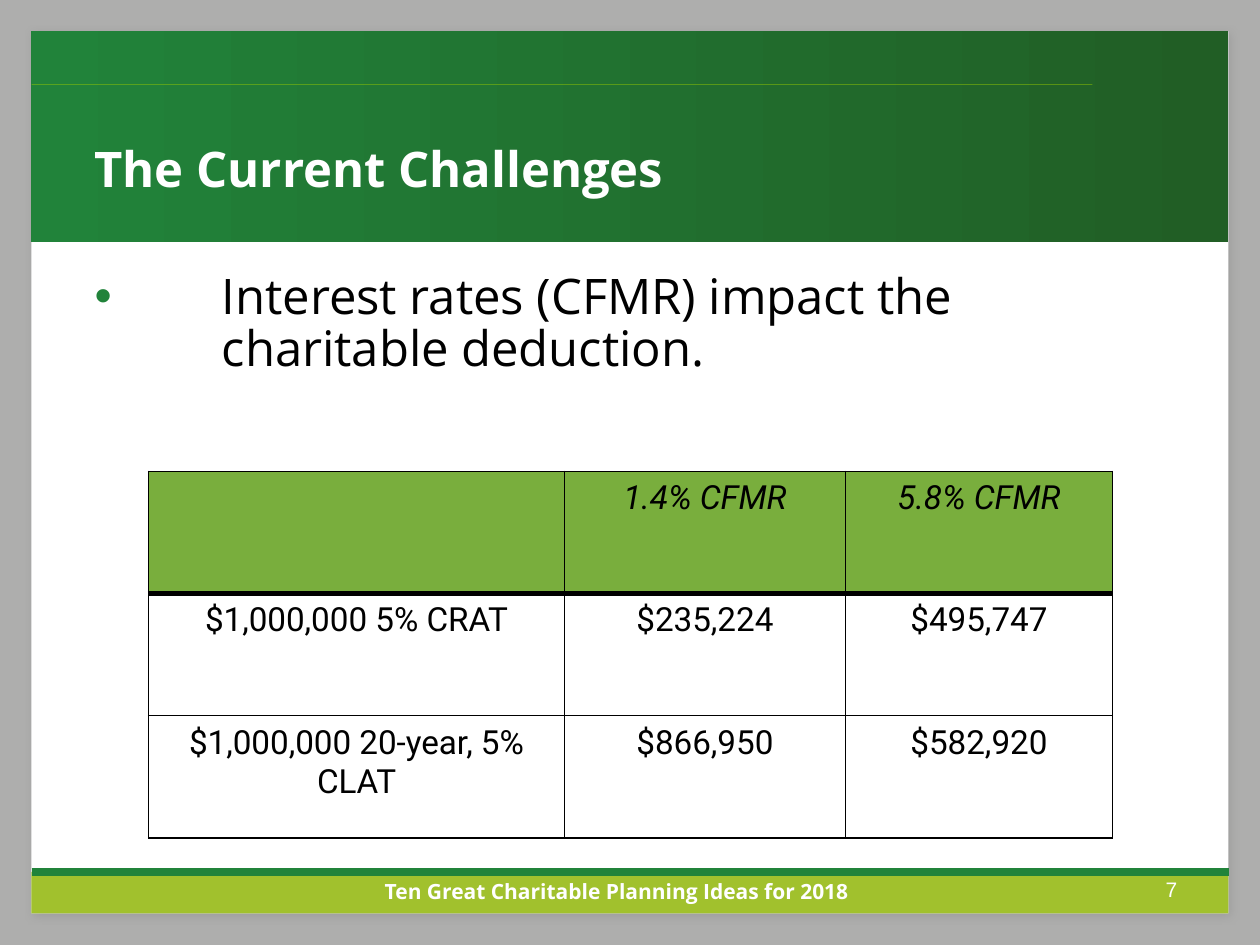
"""Build the slide on interest rates and the charitable deduction."""
import lxml.etree
import pptx
import pptx.dml.color
import pptx.enum.shapes
import pptx.enum.text
import pptx.oxml
import pptx.oxml.ns
import pptx.util

Inches = pptx.util.Inches
Pt = pptx.util.Pt
RGBColor = pptx.dml.color.RGBColor
PP_ALIGN = pptx.enum.text.PP_ALIGN
MSO_ANCHOR = pptx.enum.text.MSO_ANCHOR
qn = pptx.oxml.ns.qn

GRAY = RGBColor(0xAE, 0xAE, 0xAD)
SHADOW = RGBColor(0x80, 0x80, 0x80)
WHITE = RGBColor(0xFF, 0xFF, 0xFF)
BLACK = RGBColor(0x00, 0x00, 0x00)
LIME = RGBColor(0xA1, 0xC1, 0x2D)
BRIGHT_LIME = RGBColor(0x99, 0xCC, 0x00)
GREEN = RGBColor(0x21, 0x83, 0x3A)
DARK_GREEN = RGBColor(0x21, 0x5E, 0x25)
HEADER_GREEN = RGBColor(0x79, 0xAE, 0x3D)

NAMESPACE = pptx.oxml.ns.nsdecls("a")
THIN, THICK = 1, 3
ROWS = [
    ["", "1.4% CFMR", "5.8% CFMR"],
    ["$1,000,000 5% CRAT", "$235,224", "$495,747"],
    ["$1,000,000 20-year, 5% CLAT", "$866,950", "$582,920"],
]
COLUMN_WIDTHS = [3.3, 2.23, 2.12]
ROW_HEIGHT = 0.97


def add_panel(slide, left, top, width, height, color):
    """Add a plain filled rectangle and return it."""
    shape = slide.shapes.add_shape(
        pptx.enum.shapes.MSO_SHAPE.RECTANGLE,
        Inches(left), Inches(top), Inches(width), Inches(height))
    shape.shadow.inherit = False
    shape.fill.solid()
    shape.fill.fore_color.rgb = color
    shape.line.fill.background()
    return shape


def add_soft_shadow(shape):
    """Give a shape a soft diagonal shadow."""
    effects = shape.element.spPr.find(qn("a:effectLst"))
    effects.append(pptx.oxml.parse_xml(
        f'<a:outerShdw {NAMESPACE} blurRad="{Pt(5)}" dist="{Pt(2)}" dir="2700000">'
        f'<a:srgbClr val="{SHADOW}"><a:alpha val="37000"/></a:srgbClr></a:outerShdw>'))


def fill_gradient(shape, first, last):
    """Fill a shape with a gradient running from right to left."""
    shape.fill.gradient()
    shape.fill.gradient_angle = 180
    for stop, color, position in zip(shape.fill.gradient_stops, (first, last), (0, 1)):
        stop.color.rgb = color
        stop.position = position


def add_rule(slide, left, right, top, color, width, opacity=100):
    """Add a horizontal line."""
    connector = slide.shapes.add_connector(
        pptx.enum.shapes.MSO_CONNECTOR.STRAIGHT,
        Inches(left), Inches(top), Inches(right), Inches(top))
    connector.line.color.rgb = color
    connector.line.width = Pt(width)
    properties = connector.element.spPr
    if opacity < 100:
        color_element = next(properties.iter(qn("a:srgbClr")))
        lxml.etree.SubElement(color_element, qn("a:alpha")).set("val", str(opacity * 1000))
    lxml.etree.SubElement(properties, qn("a:effectLst"))


def add_run(paragraph, text, size, font_name, color, bold=False, italic=False):
    """Add one formatted run to a paragraph."""
    run = paragraph.add_run()
    run.text = text
    font = run.font
    font.size, font.name, font.bold, font.italic = Pt(size), font_name, bold, italic
    font.color.rgb = color


def set_frame(shape, left, top, width, height, inset=0, wrap=True, anchor=MSO_ANCHOR.TOP):
    """Place a text shape, set up its frame and return its first paragraph."""
    shape.left, shape.top = Inches(left), Inches(top)
    shape.width, shape.height = Inches(width), Inches(height)
    frame = shape.text_frame
    frame.margin_left = frame.margin_right = Inches(inset)
    frame.margin_top = frame.margin_bottom = Inches(inset)
    frame.auto_size = pptx.enum.text.MSO_AUTO_SIZE.NONE
    frame.word_wrap = wrap
    frame.vertical_anchor = anchor
    return frame.paragraphs[0]


def add_label(slide, box, text, font_name, alignment, **options):
    """Add a small white text box."""
    shape = slide.shapes.add_textbox(*map(Inches, box))
    paragraph = set_frame(shape, *box, inset=options.get("inset", 0),
                          wrap=options.get("wrap", True))
    paragraph.alignment = alignment
    add_run(paragraph, text, 12, font_name, WHITE, bold=options.get("bold", False))


def fill_title(slide):
    """Format the title placeholder and bring it to the front."""
    title = slide.shapes.title
    paragraph = set_frame(title, 0.75, 0.92, 8.5, 0.83, anchor=MSO_ANCHOR.MIDDLE)
    paragraph.alignment = PP_ALIGN.LEFT
    add_run(paragraph, "The Current Challenges", 28, "Open Sans", WHITE, bold=True)
    title.element.getparent().append(title.element)


def fill_body(slide):
    """Format the body placeholder as a bullet and bring it to the front."""
    body = slide.placeholders[1]
    paragraph = set_frame(body, 0.75, 2.17, 8.5, 4.5)
    paragraph.space_before = Pt(21)
    paragraph.line_spacing = 0.88
    add_run(paragraph, "Interest rates (CFMR) impact the charitable deduction.",
            28, "Open Sans", BLACK)
    properties = paragraph.runs[0].font._element.getparent().getparent().get_or_add_pPr()
    properties.set("marL", str(Inches(1.01)))
    properties.set("indent", str(-Inches(1.01)))
    for bullet in (f'<a:buClr {NAMESPACE}><a:srgbClr val="{GREEN}"/></a:buClr>',
                   f'<a:buFont {NAMESPACE} typeface="Arial"/>',
                   f'<a:buChar {NAMESPACE} char="•"/>'):
        properties.append(pptx.oxml.parse_xml(bullet))
    body.element.getparent().append(body.element)


def set_borders(cell, top, bottom):
    """Draw black borders on the four sides of a cell."""
    properties = cell._tc.get_or_add_tcPr()
    sides = (("lnL", THIN), ("lnR", THIN), ("lnT", top), ("lnB", bottom))
    for index, (side, width) in enumerate(sides):
        properties.insert(index, pptx.oxml.parse_xml(
            f'<a:{side} {NAMESPACE} w="{Pt(width)}"><a:solidFill>'
            f'<a:srgbClr val="{BLACK}"/></a:solidFill></a:{side}>'))


def add_deduction_table(slide):
    """Add the table of deductions by interest rate."""
    table = slide.shapes.add_table(
        len(ROWS), len(COLUMN_WIDTHS), Inches(1.18), Inches(3.74),
        Inches(sum(COLUMN_WIDTHS)), Inches(ROW_HEIGHT * len(ROWS))).table
    table.first_row = table.horz_banding = False
    for column, width in zip(table.columns, COLUMN_WIDTHS):
        column.width = Inches(width)
    for row_index, texts in enumerate(ROWS):
        header = row_index == 0
        table.rows[row_index].height = Inches(ROW_HEIGHT)
        for column_index, text in enumerate(texts):
            cell = table.cell(row_index, column_index)
            cell.margin_left = cell.margin_right = Inches(0.06)
            cell.margin_top = cell.margin_bottom = Inches(0.06)
            cell.fill.solid()
            cell.fill.fore_color.rgb = HEADER_GREEN if header else WHITE
            set_borders(cell, THICK if row_index == 1 else THIN, THICK if header else THIN)
            if text:
                paragraph = cell.text_frame.paragraphs[0]
                paragraph.alignment = PP_ALIGN.CENTER
                add_run(paragraph, text, 19, "Roboto", BLACK, italic=header)


def main():
    """Build and save the presentation."""
    presentation = pptx.Presentation()
    presentation.slide_width, presentation.slide_height = Inches(10), Inches(7.5)
    slide = presentation.slides.add_slide(presentation.slide_layouts[1])
    add_panel(slide, 0, 0, 10, 7.5, GRAY)
    add_soft_shadow(add_panel(slide, 0.25, 0.25, 9.5, 7, WHITE))
    add_panel(slide, 0.25, 6.92, 9.5, 0.33, LIME)
    fill_gradient(add_panel(slide, 0.25, 0.25, 9.5, 1.67, GREEN), DARK_GREEN, GREEN)
    add_rule(slide, 0.25, 8.67, 0.67, BRIGHT_LIME, 0.25, opacity=71)
    add_rule(slide, 0.25, 9.75, 6.92, GREEN, 4.5)
    fill_title(slide)
    fill_body(slide)
    add_label(slide, (9.25, 6.96, 0.42, 0.19), "7", "Arial", PP_ALIGN.LEFT)
    add_deduction_table(slide)
    add_label(slide, (2.89, 6.92, 4.01, 0.31), "Ten Great Charitable Planning Ideas for 2018",
              "Open Sans", PP_ALIGN.CENTER, inset=0.05, wrap=False, bold=True)
    presentation.save("out.pptx")


if __name__ == "__main__":
    main()
